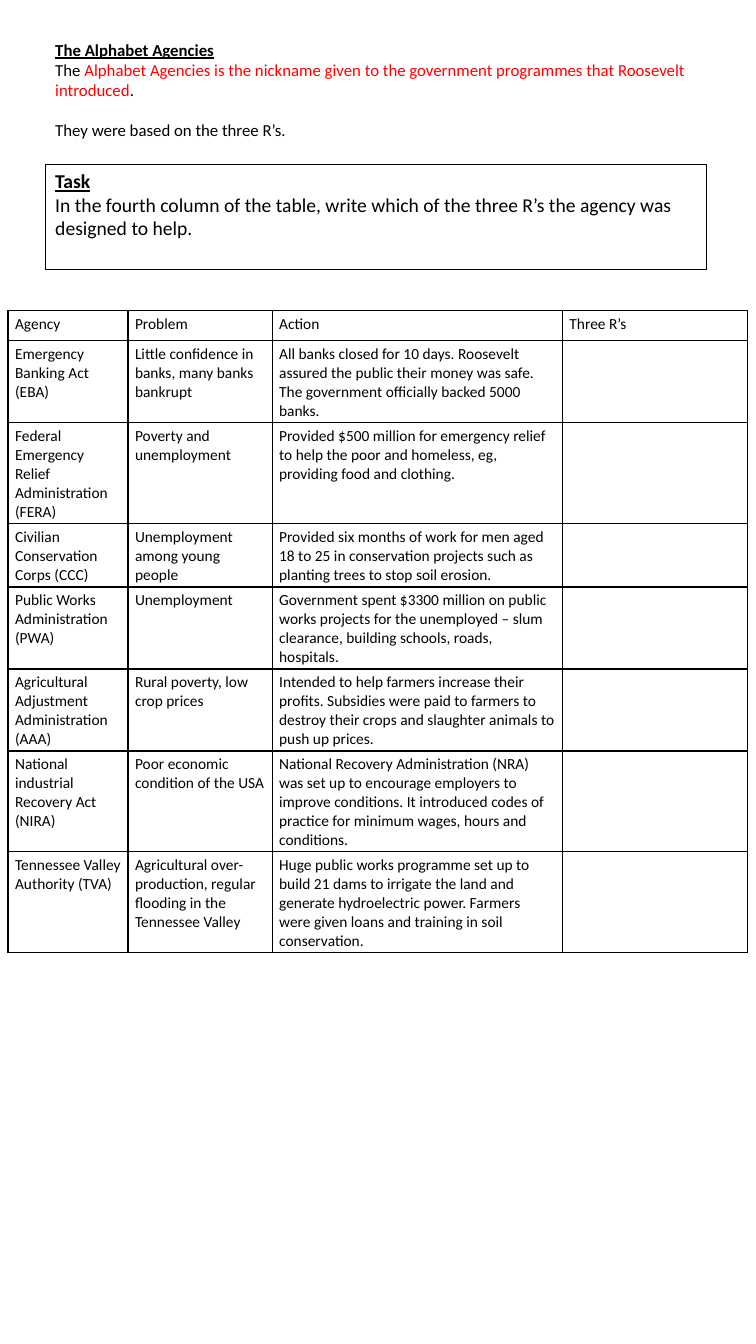
import dataclasses

import lxml.etree
import pptx
import pptx.dml.color
import pptx.enum.shapes
import pptx.enum.text
import pptx.oxml.ns
import pptx.util

PX = 9144


@dataclasses.dataclass(frozen=True)
class Theme:
    font: str = "Calibri"
    ink: str = "000000"
    red: str = "FF0000"
    body: int = 12
    task: int = 14
    cell: int = 11
    gap: float = 14.6
    edge: float = 0.75
    grid: int = 1


THEME = Theme()
HEADS = ("Agency", "Problem", "Action", "Three R’s")
ROWS = (
    ("Emergency Banking Act (EBA)",
     "Little confidence in banks, many banks bankrupt",
     "All banks closed for 10 days. Roosevelt assured the public their money was safe. "
     "The government officially backed 5000 banks."),
    ("Federal Emergency Relief Administration (FERA)",
     "Poverty and unemployment",
     "Provided $500 million for emergency relief to help the poor and homeless, eg, "
     "providing food and clothing."),
    ("Civilian Conservation Corps (CCC)",
     "Unemployment among young people",
     "Provided six months of work for men aged 18 to 25 in conservation projects such as "
     "planting trees to stop soil erosion."),
    ("Public Works Administration (PWA)",
     "Unemployment",
     "Government spent $3300 million on public works projects for the unemployed – slum "
     "clearance, building schools, roads, hospitals."),
    ("Agricultural Adjustment Administration (AAA)",
     "Rural poverty, low crop prices",
     "Intended to help farmers increase their profits. Subsidies were paid to farmers to "
     "destroy their crops and slaughter animals to push up prices."),
    ("National industrial Recovery Act (NIRA)",
     "Poor economic condition of the USA",
     "National Recovery Administration (NRA) was set up to encourage employers to improve "
     "conditions. It introduced codes of practice for minimum wages, hours and conditions."),
    ("Tennessee Valley Authority (TVA)",
     "Agricultural over-production, regular flooding in the Tennessee Valley",
     "Huge public works programme set up to build 21 dams to irrigate the land and generate "
     "hydroelectric power. Farmers were given loans and training in soil conservation."),
)
LINES = (4, 5, 3, 4, 4, 5, 5)
WIDTHS = (119, 143, 288, 184)


def emu(box):
    return [n * PX for n in box]


def rgb(tint):
    return pptx.dml.color.RGBColor.from_string(tint)


def style(run, size, tint=THEME.ink, head=False):
    font = run.font
    font.name = THEME.font
    font.size = pptx.util.Pt(size)
    font.color.rgb = rgb(tint)
    font.bold = font.underline = head


def write(frame, lines, size):
    frame.word_wrap = True
    frame.vertical_anchor = pptx.enum.text.MSO_ANCHOR.TOP
    frame.text = "\n".join(lines)
    for i, para in enumerate(frame.paragraphs):
        para.alignment = pptx.enum.text.PP_ALIGN.LEFT
        for run in para.runs:
            style(run, size, head=i == 0)


def intro(slide, box):
    frame = slide.shapes.add_textbox(*emu(box)).text_frame
    write(frame, ("The Alphabet Agencies", "The ", "They were based on the three R’s."), THEME.body)
    para = frame.paragraphs[1]
    for text, tint in (
        ("Alphabet Agencies is the nickname given to the government programmes "
         "that Roosevelt introduced", THEME.red),
        (".", THEME.ink),
    ):
        run = para.add_run()
        run.text = text
        style(run, THEME.body, tint)
    frame.paragraphs[2].space_before = pptx.util.Pt(THEME.gap)


def task(slide, box):
    shape = slide.shapes.add_shape(pptx.enum.shapes.MSO_SHAPE.RECTANGLE, *emu(box))
    shape.shadow.inherit = False
    shape.fill.background()
    shape.line.color.rgb = rgb(THEME.ink)
    shape.line.width = pptx.util.Pt(THEME.edge)
    write(shape.text_frame, (
        "Task",
        "In the fourth column of the table, write which of the three R’s the agency was "
        "designed to help.",
    ), THEME.task)


def border(cell):
    props = cell._tc.get_or_add_tcPr()
    name = pptx.oxml.ns.qn
    for i, side in enumerate("LRTB"):
        line = lxml.etree.Element(name("a:ln" + side), w=str(pptx.util.Pt(THEME.grid)))
        fill = lxml.etree.SubElement(line, name("a:solidFill"))
        lxml.etree.SubElement(fill, name("a:srgbClr"), val=THEME.ink)
        props.insert(i, line)


def fill(cell, text):
    cell.margin_left = cell.margin_right = 7 * PX
    cell.margin_top = cell.margin_bottom = 4 * PX
    cell.fill.background()
    border(cell)
    cell.text = text
    para = cell.text_frame.paragraphs[0]
    para.font.size = pptx.util.Pt(THEME.cell)
    for run in para.runs:
        style(run, THEME.cell)


def agencies(slide, box):
    rows = (HEADS,) + tuple(row + ("",) for row in ROWS)
    table = slide.shapes.add_table(len(rows), len(HEADS), *emu(box)).table
    table.first_row = table.horz_banding = False
    for col, width in zip(table.columns, WIDTHS):
        col.width = width * PX
    for row, high in zip(table.rows, [30] + [9 + 18 * n for n in LINES]):
        row.height = high * PX
    for r, row in enumerate(rows):
        for c, text in enumerate(row):
            fill(table.cell(r, c), text)


def main():
    deck = pptx.Presentation()
    deck.slide_width, deck.slide_height = emu((750, 1333))
    slide = deck.slides.add_slide(deck.slide_layouts[6])
    intro(slide, (45, 34, 656, 111))
    agencies(slide, (8, 308, 734, 633))
    task(slide, (45, 163, 656, 104))
    deck.save("out.pptx")


if __name__ == "__main__":
    main()
